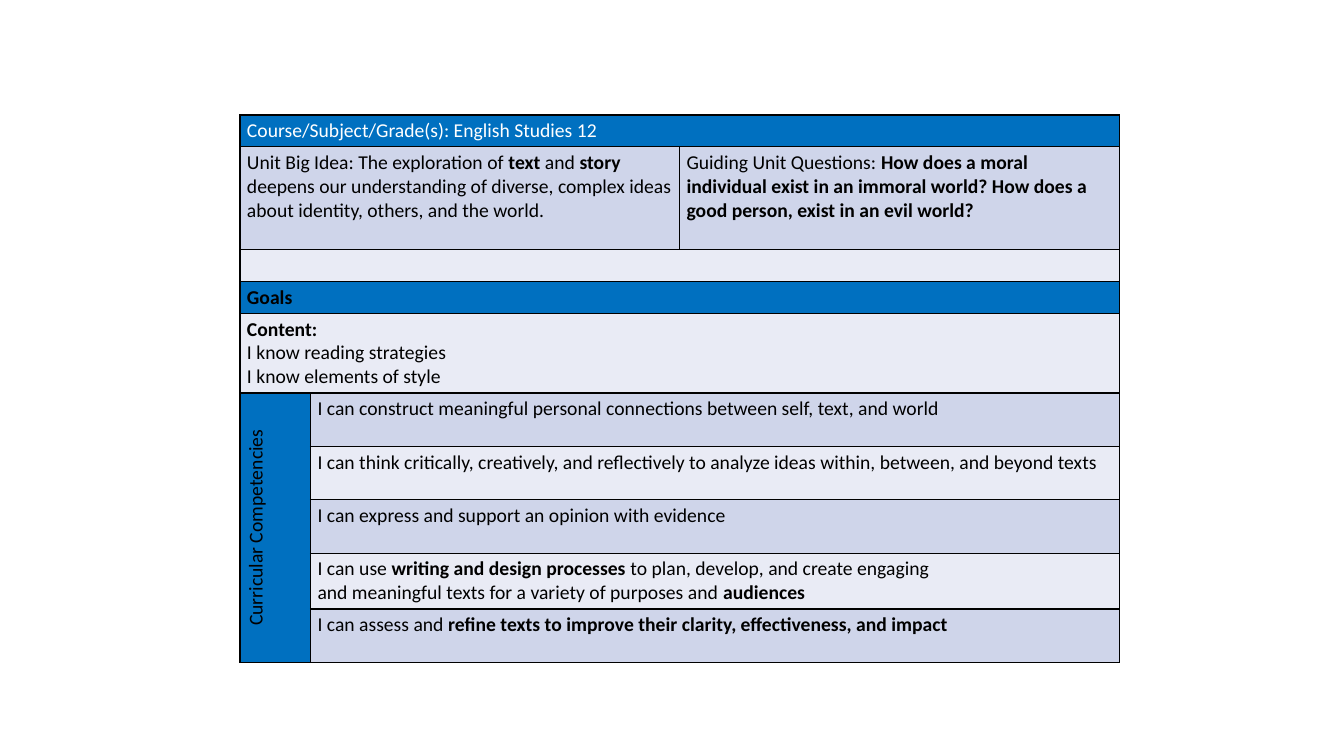
from pptx import Presentation
from pptx.dml.color import RGBColor as RGB
from pptx.enum.text import MSO_ANCHOR as Anchor, PP_ALIGN as Align
from pptx.oxml import parse_xml
from pptx.oxml.ns import nsdecls
from pptx.util import Inches, Pt

COLORS = {"head": "0070C0", "dark": "CFD5EA", "light": "E9EBF5",
          "ink": "000000", "white": "FFFFFF"}
COLS = [0.7, 3.66, 4.36]
ROWS = [0.31, 1.02, 0.31, 0.31, 0.78] + [0.53] * 3 + [0.54, 0.53]

# (row, column, last row, last column, fill, paragraphs); ** toggles bold
CELLS = [
    (0, 0, 0, 2, "head", ["Course/Subject/Grade(s): English Studies 12"]),
    (1, 0, 1, 1, "dark", [
        "Unit Big Idea: The exploration of **text **and **story **deepens our "
        "understanding of diverse, complex ideas about identity, others, "
        "and the world."]),
    (1, 2, 1, 2, "dark", [
        "Guiding Unit Questions: **How does a moral individual exist in an "
        "immoral world? How does a good person, exist in an evil world?"]),
    (2, 0, 2, 2, "light", []),
    (3, 0, 3, 2, "head", ["**Goals"]),
    (4, 0, 4, 2, "light", ["**Content:", "I know reading strategies",
                           "I know elements of style"]),
    (5, 0, 9, 0, "head", ["Curricular Competencies"]),
]
SKILLS = [
    ["I can construct meaningful personal connections between self, text, "
     "and world"],
    ["I can think critically, creatively, and reflectively to analyze ideas "
     "within, between, and beyond texts"],
    ["I can express and support an opinion with evidence"],
    ["I can use **writing and design processes **to plan, develop, and create "
     "engaging",
     "and meaningful texts for a variety of purposes and **audiences"],
    ["I can assess and **refine texts to improve their clarity, "
     "effectiveness, and impact"],
]


class Deck:
    font, size = "Calibri", 14

    def __init__(self):
        self.prs = Presentation()
        self.prs.slide_width = Inches(13.33)
        self.prs.slide_height = Inches(7.5)
        self.slide = self.prs.slides.add_slide(self.prs.slide_layouts[6])

    def table(self, left, top, cols, rows):
        frame = self.slide.shapes.add_table(
            len(rows), len(cols), Inches(left), Inches(top),
            Inches(sum(cols)), Inches(sum(rows)))
        grid = frame.table
        for col, width in zip(grid.columns, cols):
            col.width = Inches(width)
        for row, height in zip(grid.rows, rows):
            row.height = Inches(height)
        for cell in grid.iter_cells():
            self.frame(cell)
        return grid

    def frame(self, cell):
        """Set the insets, the black borders and the size of empty text."""
        cell.margin_left = cell.margin_right = Inches(0.07)
        cell.margin_top = cell.margin_bottom = Inches(0.04)
        props = cell._tc.get_or_add_tcPr()
        for i, side in enumerate("LRTB"):
            props.insert(i, parse_xml(
                f'<a:ln{side} {nsdecls("a")} w="{Pt(1)}"><a:solidFill>'
                f'<a:srgbClr val="{COLORS["ink"]}"/></a:solidFill>'
                f'</a:ln{side}>'))
        cell.text_frame.paragraphs[0]._p.append(parse_xml(
            f'<a:endParaRPr {nsdecls("a")} sz="{self.size * 100}"/>'))

    def fill(self, cell, color):
        cell.fill.solid()
        cell.fill.fore_color.rgb = RGB.from_string(COLORS[color])

    def text(self, cell, lines, color="ink"):
        body = cell.text_frame
        for i, line in enumerate(lines):
            para = body.add_paragraph() if i else body.paragraphs[0]
            for j, part in enumerate(line.split("**")):
                if part:
                    run = para.add_run()
                    run.text = part
                    run.font.name, run.font.size = self.font, Pt(self.size)
                    run.font.bold = j % 2 == 1
                    run.font.color.rgb = RGB.from_string(COLORS[color])

    def turn(self, cell):
        """Make the text read upwards, centred in the cell."""
        cell._tc.get_or_add_tcPr().set("vert", "vert270")
        cell.vertical_anchor = Anchor.MIDDLE
        cell.text_frame.paragraphs[0].alignment = Align.CENTER


def main():
    deck = Deck()
    grid = deck.table(2.38, 1.14, COLS, ROWS)
    skills = [(5 + i, 1, 5 + i, 2, ("dark", "light")[i % 2], lines)
              for i, lines in enumerate(SKILLS)]
    for row, col, end, last, color, lines in CELLS + skills:
        cell = grid.cell(row, col)
        if (row, col) != (end, last):
            cell.merge(grid.cell(end, last))
        for r in range(row, end + 1):
            for c in range(col, last + 1):
                deck.fill(grid.cell(r, c), color)
        deck.text(cell, lines, "ink" if row else "white")
    deck.turn(grid.cell(5, 0))
    deck.prs.save("out.pptx")


if __name__ == "__main__":
    main()
